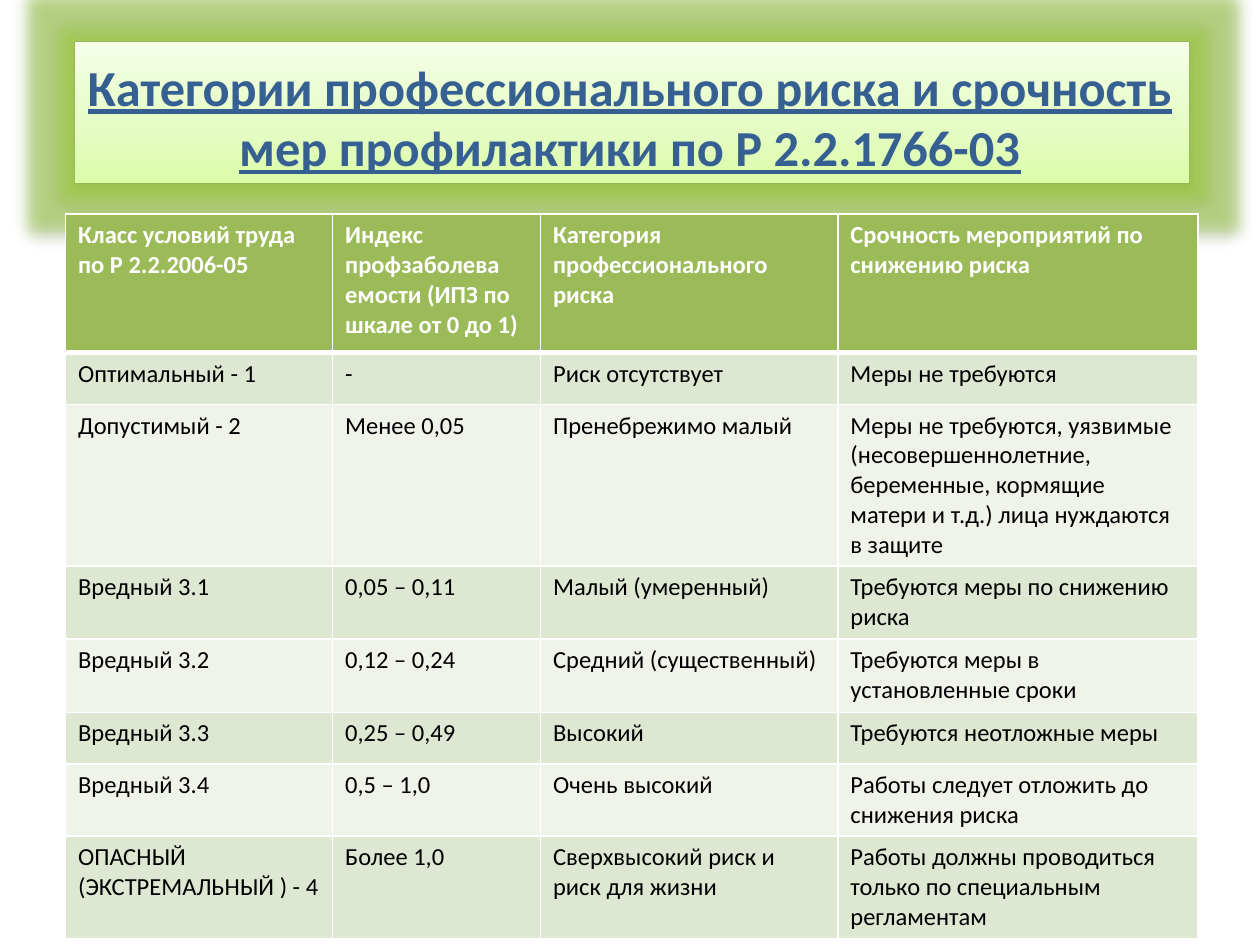
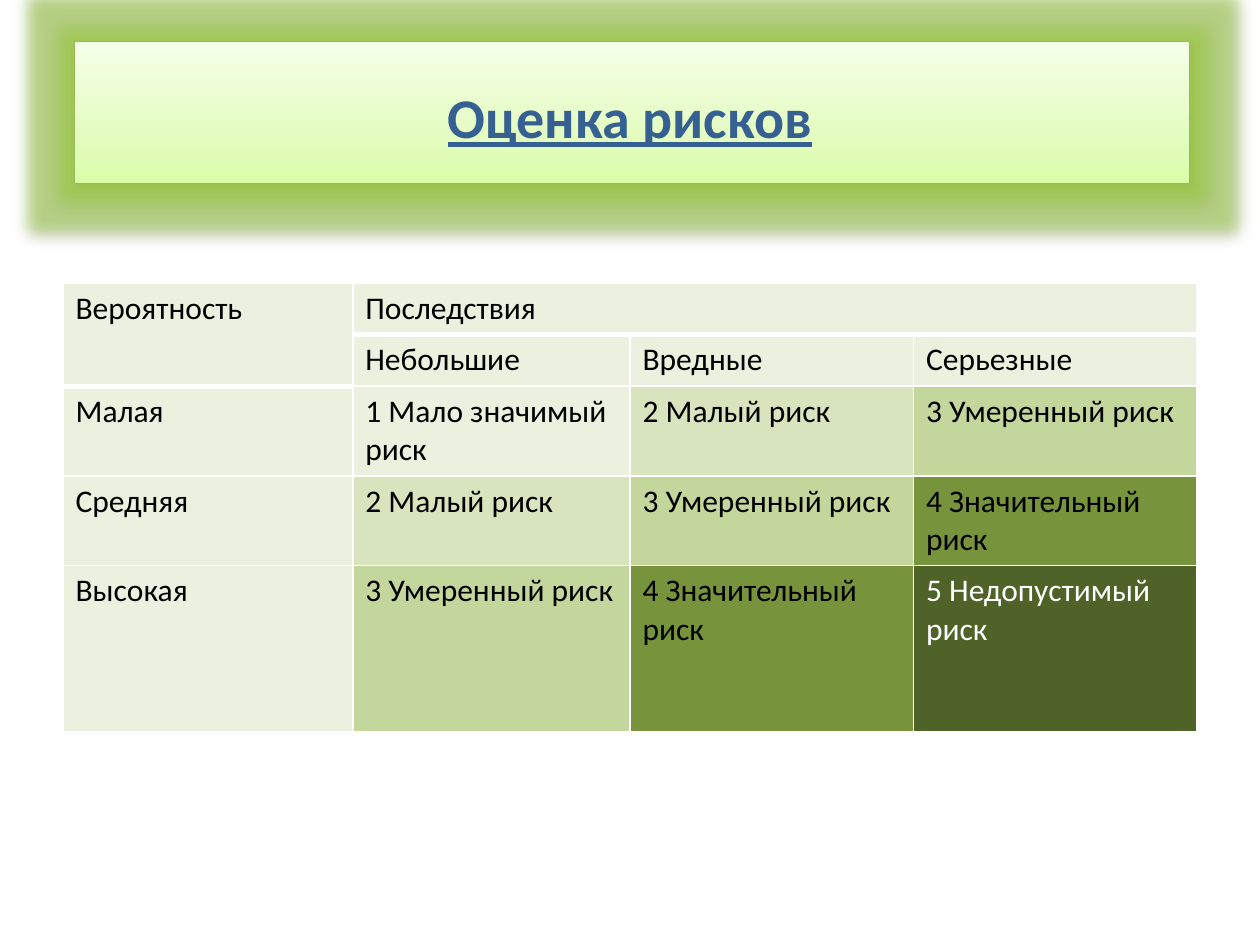
from lxml import etree
from pptx import Presentation
from pptx.dml.color import RGBColor
from pptx.enum.shapes import MSO_SHAPE
from pptx.enum.text import MSO_ANCHOR, PP_ALIGN
from pptx.oxml import parse_xml
from pptx.oxml.ns import nsdecls, qn
from pptx.util import Inches, Pt

HUES = {
    "title": "376092", "edge": "98B955", "glow": "9BD038",
    "low": "DAFDA7", "mid": "E4FCC2", "high": "F5FFE7",
    "head": "9BBB59", "odd": "DEE7D1", "even": "EFF3EA",
    "white": "FFFFFF", "black": "000000",
}
# Risk levels 1 to 5, from pale to dark
RISKS = ["EBF1DE", "D7E4BD", "C3D69B", "77933C", "4F6228"]

GRAD = f"""<a:gradFill {nsdecls('a')} rotWithShape="1"><a:gsLst>
<a:gs pos="0"><a:srgbClr val="{HUES['low']}"/></a:gs>
<a:gs pos="35000"><a:srgbClr val="{HUES['mid']}"/></a:gs>
<a:gs pos="100000"><a:srgbClr val="{HUES['high']}"/></a:gs>
</a:gsLst><a:lin ang="16200000" scaled="1"/></a:gradFill>"""
GLOW = f"""<a:glow {nsdecls('a')} rad="228600">
<a:srgbClr val="{HUES['glow']}"><a:alpha val="50000"/></a:srgbClr></a:glow>"""
SHADE = f"""<a:outerShdw {nsdecls('a')} blurRad="40000" dist="20000" dir="5400000" rotWithShape="0">
<a:srgbClr val="{HUES['black']}"><a:alpha val="38000"/></a:srgbClr></a:outerShdw>"""

deck = Presentation()
deck.slide_width, deck.slide_height = Inches(10), Inches(7.5)


def style(para, size, hue, **more):
    look = {"name": "Calibri", "size": Pt(size), "bold": False, **more}
    for key, value in look.items():
        setattr(para.font, key, value)
    para.font.color.rgb = RGBColor.from_string(hue)


def paint(cell, text, size, fill, hue, bold, base):
    cell.text = text
    style(cell.text_frame.paragraphs[0], size, hue, bold=bold)
    props = cell._tc.get_or_add_tcPr()
    for side, width in {"L": 1, "R": 1, "T": 1, "B": base}.items():
        line = etree.SubElement(props, qn(f"a:ln{side}"), w=str(Pt(width)))
        solid = etree.SubElement(line, qn("a:solidFill"))
        etree.SubElement(solid, qn("a:srgbClr"), val=HUES["white"])
    cell.fill.solid()
    cell.fill.fore_color.rgb = RGBColor.from_string(fill)


classes = [
    ["Класс условий труда по Р 2.2.2006-05",
     "Индекс профзаболева емости (ИПЗ по шкале от 0 до 1)",
     "Категория профессионального риска", "Срочность мероприятий по снижению риска"],
    ["Оптимальный - 1", "-", "Риск отсутствует", "Меры не требуются"],
    ["Допустимый - 2", "Менее 0,05", "Пренебрежимо малый",
     "Меры не требуются, уязвимые (несовершеннолетние, беременные, "
     "кормящие матери и т.д.) лица нуждаются в защите"],
    ["Вредный 3.1", "0,05 – 0,11", "Малый (умеренный)", "Требуются меры по снижению риска"],
    ["Вредный 3.2", "0,12 – 0,24", "Средний (существенный)",
     "Требуются меры в установленные сроки"],
    ["Вредный 3.3", "0,25 – 0,49", "Высокий", "Требуются неотложные меры"],
    ["Вредный 3.4", "0,5 – 1,0", "Очень высокий", "Работы следует отложить до снижения риска"],
    ["ОПАСНЫЙ (ЭКСТРЕМАЛЬНЫЙ ) - 4", "Более 1,0", "Сверхвысокий риск и риск для жизни",
     "Работы должны проводиться только по специальным регламентам"],
]
levels = ["1 Мало значимый риск", "2 Малый риск", "3 Умеренный риск",
          "4 Значительный риск", "5 Недопустимый риск"]
odds = [["Вероятность", "Последствия", "", ""], ["", "Небольшие", "Вредные", "Серьезные"]]
for step, name in enumerate(["Малая", "Средняя", "Высокая"]):
    odds.append([name] + levels[step:step + 3])

pages = [
    {"title": "Категории профессионального риска и срочность мер профилактики по Р 2.2.1766-03",
     "size": 28.8, "data": classes, "at": (0.52, 1.7),
     "cols": [2.12, 1.65, 2.36, 2.86],
     "rows": [1.1, 0.41, 1.28, 0.58, 0.58, 0.41, 0.57, 0.8]},
    {"title": "Оценка рисков", "size": 32, "data": odds, "at": (0.5, 2.25),
     "cols": [2.3, 2.2, 2.25, 2.25], "rows": [0.4, 0.41, 0.71, 0.71, 1.32]},
]

tables = []
for page in pages:
    slide = deck.slides.add_slide(deck.slide_layouts[5])

    # Glowing band behind the title
    band = slide.shapes.add_shape(
        MSO_SHAPE.RECTANGLE, Inches(0.59), Inches(0.33), Inches(8.85), Inches(1.13))
    band.line.color.rgb = RGBColor.from_string(HUES["edge"])
    band.line.width = Pt(0.75)
    band.shadow.inherit = False
    props = band._element.spPr
    props.find(qn("a:ln")).addprevious(parse_xml(GRAD))
    for part in (GLOW, SHADE):
        props.find(qn("a:effectLst")).append(parse_xml(part))
    slide.shapes._spTree.insert(2, band._element)

    # Title
    title = slide.shapes.title
    spot = {"left": 0.5, "top": 0.3, "width": 9, "height": 1.25}
    for key, value in spot.items():
        setattr(title, key, Inches(value))
    title.text_frame.text = page["title"]
    title.text_frame.vertical_anchor = MSO_ANCHOR.MIDDLE
    para = title.text_frame.paragraphs[0]
    para.alignment = PP_ALIGN.CENTER
    style(para, page["size"], HUES["title"], bold=True, underline=True)

    # Table grid
    left, top = page["at"]
    cols, rows = page["cols"], page["rows"]
    table = slide.shapes.add_table(
        len(rows), len(cols), Inches(left), Inches(top),
        Inches(sum(cols)), Inches(sum(rows))).table
    for col, width in zip(table.columns, cols):
        col.width = Inches(width)
    for row, height in zip(table.rows, rows):
        row.height = Inches(height)
    tables.append(table)

# Risk classes: header, then striped rows
for r, row in enumerate(classes):
    fill = HUES["head" if r == 0 else "odd" if r % 2 else "even"]
    hue = HUES["black" if r else "white"]
    for c, text in enumerate(row):
        paint(tables[0].cell(r, c), text, 14, fill, hue, r == 0, 1 if r else 3)

# Risk matrix: shade follows the level number
grid = tables[1]
for r, row in enumerate(odds):
    for c, text in enumerate(row):
        level = r + c - 3 if r > 1 and c else 0
        hue = HUES["white" if level == 4 else "black"]
        thick = r == 0 or (r, c) == (1, 0)
        paint(grid.cell(r, c), text, 18, RISKS[level], hue, False, 3 if thick else 1)
grid.cell(0, 0).merge(grid.cell(1, 0))
grid.cell(0, 1).merge(grid.cell(0, 3))

deck.save("out.pptx")
